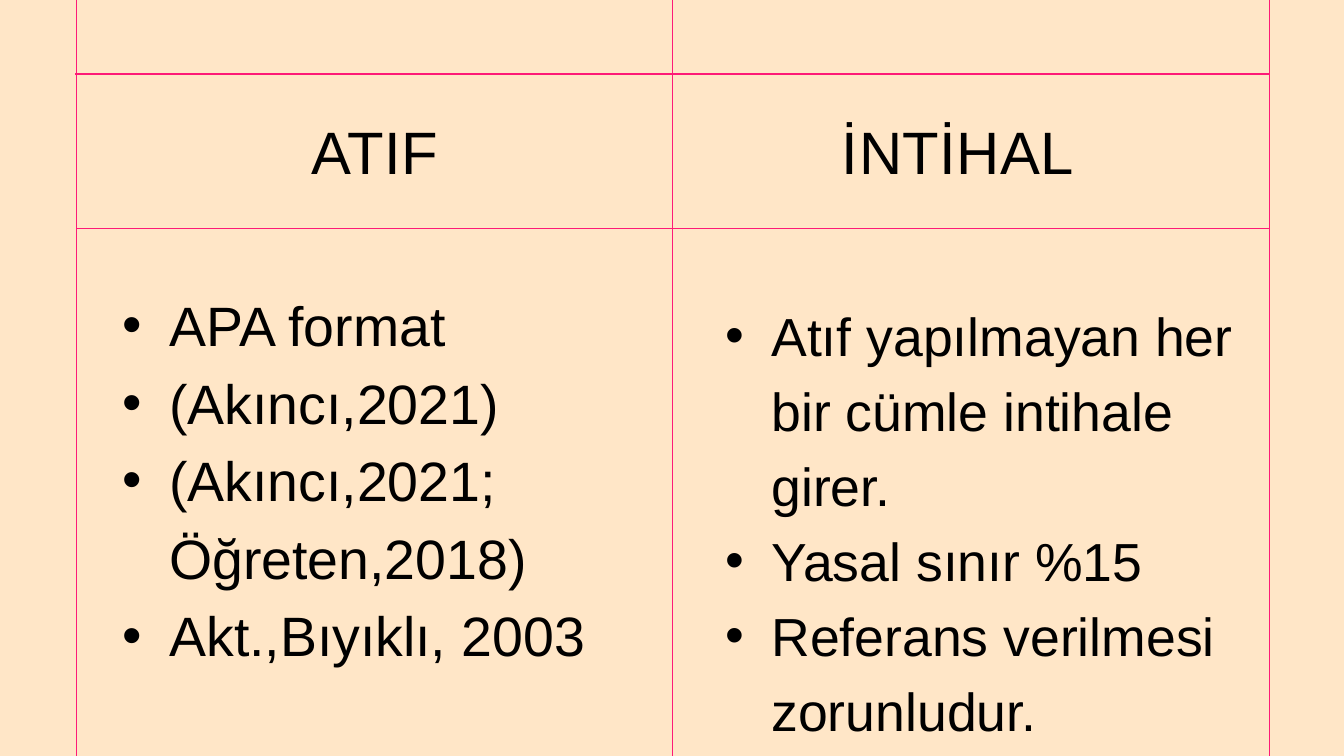
from lxml.etree import SubElement
from pptx import Presentation
from pptx.dml.color import RGBColor
from pptx.enum.shapes import MSO_CONNECTOR
from pptx.enum.text import MSO_AUTO_SIZE, PP_ALIGN
from pptx.oxml.ns import qn
from pptx.util import Inches, Pt

WIDTH, HEIGHT = 20, 11.25


def color(hex_code):
    """Turn a hex string into a colour."""
    return RGBColor.from_string(hex_code)


def write(frame, lines, size, spacing, align, indent=0, tracking=0, font="Arial", ink="000000"):
    """Write one paragraph per line, bulleted when an indent is given."""
    for index, line in enumerate(lines):
        paragraph = frame.add_paragraph() if index else frame.paragraphs[0]
        paragraph.alignment = align
        paragraph.line_spacing = Pt(spacing)
        run = paragraph.add_run()
        run.text = line
        run.font.name = font
        run.font.size = Pt(size)
        run.font.color.rgb = color(ink)
        if tracking:
            run.font._element.set("spc", str(round(tracking * 100)))
        if indent:
            paragraph.level = 1
            properties = paragraph._p.get_or_add_pPr()
            properties.set("marL", str(Inches(2 * indent)))
            properties.set("indent", str(-Inches(indent)))
            SubElement(properties, qn("a:buFont")).set("typeface", font)
            SubElement(properties, qn("a:buChar")).set("char", "•")


class Board:
    """Hold the style and the current slide."""

    def __init__(self, slide, paper="FFE6C7", rule="FD1A77"):
        """Paint the background and keep the rule colour."""
        self.slide = slide
        self.rule = rule
        slide.background.fill.solid()
        slide.background.fill.fore_color.rgb = color(paper)

    def line(self, x1, y1, x2, y2):
        """Draw one grid rule."""
        rule = self.slide.shapes.add_connector(
            MSO_CONNECTOR.STRAIGHT, Inches(x1), Inches(y1), Inches(x2), Inches(y2))
        rule.line.color.rgb = color(self.rule)
        rule.line.width = Pt(1.5)
        SubElement(rule._element.spPr, qn("a:effectLst"))

    def text(self, left, top, width, height, lines, **style):
        """Place a text box without margins."""
        box = self.slide.shapes.add_textbox(
            Inches(left), Inches(top), Inches(width), Inches(height))
        frame = box.text_frame
        frame.word_wrap = True
        frame.auto_size = MSO_AUTO_SIZE.SHAPE_TO_FIT_TEXT
        frame.margin_left = frame.margin_top = frame.margin_right = frame.margin_bottom = 0
        write(frame, lines, **style)

    def heading(self, left, width, label):
        """Place a column heading."""
        self.text(left, 1.7, width, 1.09, [label], size=64.1, spacing=76.9,
                  align=PP_ALIGN.CENTER, tracking=0.6)


def main():
    """Build the comparison slide."""
    deck = Presentation()
    deck.slide_width, deck.slide_height = Inches(WIDTH), Inches(HEIGHT)
    board = Board(deck.slides.add_slide(deck.slide_layouts[6]))

    for y, left, right in ((3.4, 1.15, 18.88), (1.1, 1.12, 18.9)):
        board.line(left, y, right, y)
    for x in (1.14, 10.01, 18.89):
        board.line(x, 0, x, HEIGHT)

    board.heading(3.82, 3.51, "ATIF")
    board.heading(12.32, 3.88, "İNTİHAL")

    citation = ["APA format", "(Akıncı,2021)", "(Akıncı,2021; Öğreten,2018)", "Akt.,Bıyıklı, 2003"]
    plagiarism = ["Atıf yapılmayan her bir cümle intihale girer.", "Yasal sınır %15",
                  "Referans verilmesi zorunludur."]
    board.text(1.12, 4.17, 8.88, 5.71, citation, size=59.4, spacing=83.1,
               align=PP_ALIGN.JUSTIFY, indent=0.7)
    board.text(10.12, 4.35, 8.58, 5.53, plagiarism, size=57.4, spacing=80.4,
               align=PP_ALIGN.LEFT, indent=0.68)

    deck.save("out.pptx")


if __name__ == "__main__":
    main()
